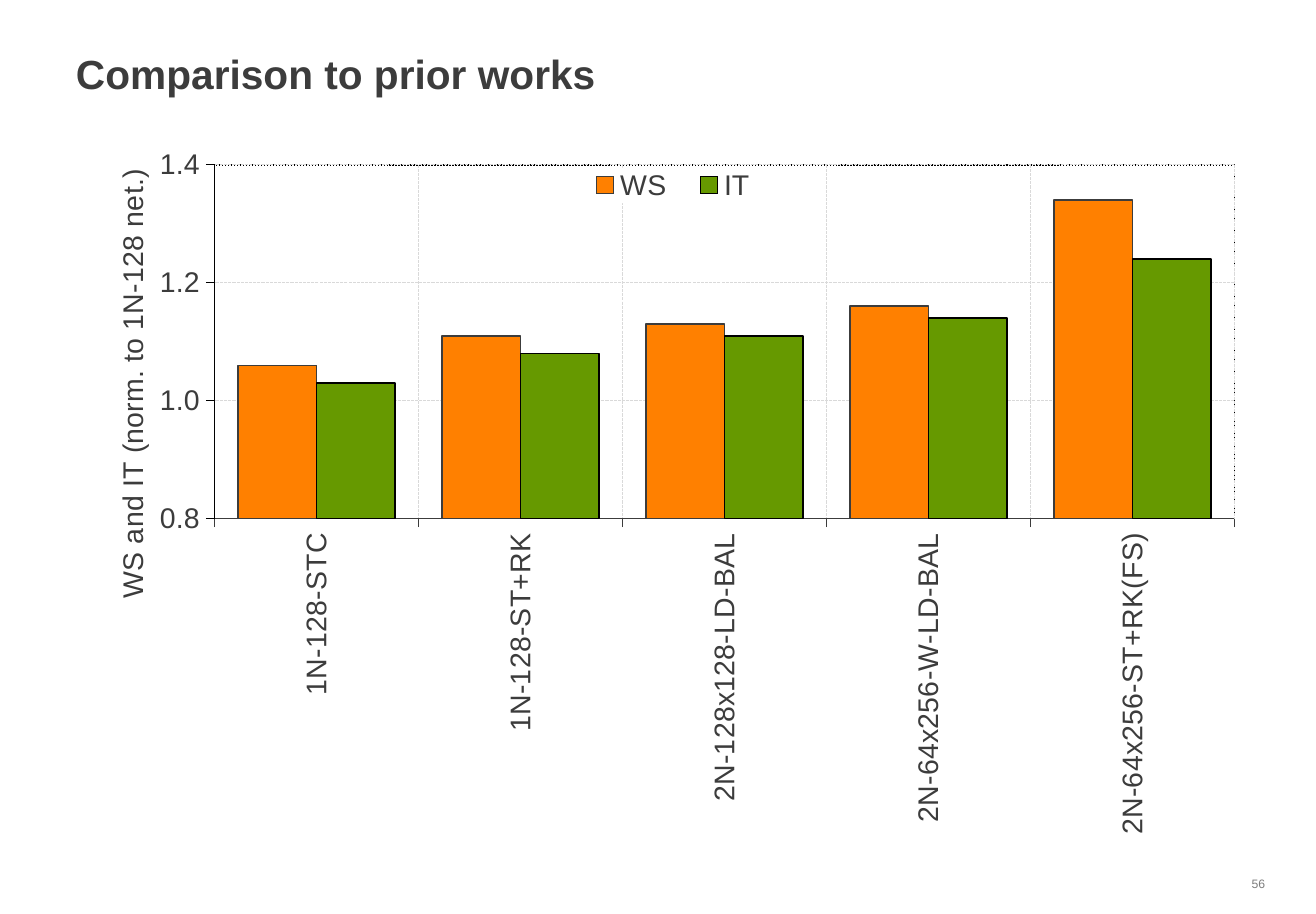
"""Build a slide with a column chart that compares prior works."""
from lxml import etree
from pptx import Presentation
from pptx.chart.data import CategoryChartData
from pptx.dml.color import RGBColor
from pptx.enum.chart import XL_CHART_TYPE, XL_LEGEND_POSITION, XL_TICK_MARK
from pptx.enum.dml import MSO_LINE
from pptx.oxml import parse_xml
from pptx.oxml.ns import nsdecls, qn
from pptx.util import Inches, Pt

COLUMNS = XL_CHART_TYPE.COLUMN_CLUSTERED
LEGEND_RIGHT = XL_LEGEND_POSITION.RIGHT
TICK_OUTSIDE, TICK_NONE = XL_TICK_MARK.OUTSIDE, XL_TICK_MARK.NONE
DASH = MSO_LINE.SQUARE_DOT

FONT = "Arial"
COLORS = {"text": "3C3C3C", "muted": "7D7D7D", "grid": "D9D9D9", "black": "000000",
          "white": "FFFFFF", "orange": "FF8000", "green": "669900"}
TEXTS = [
    ("Comparison to prior works", (0.45, 0.33, 8.1, 0.43), 20, "text", True, 0.9),
    ("56", (8.49, 5.96, 0.3, 0.17), 6, "muted", False, 0.95),
]
CHART_BOX = (0.5, 0.88, 8.13, 4.84)
AXIS_TITLE = "WS and IT (norm. to 1N-128 net.)"
CATEGORIES = ["1N-128-STC", "1N-128-ST+RK", "2N-128x128-LD-BAL",
              "2N-64x256-W-LD-BAL", "2N-64x256-ST+RK(FS)"]
SERIES = [
    ("WS", [1.06, 1.11, 1.13, 1.16, 1.34], "orange", "text"),
    ("IT", [1.03, 1.08, 1.11, 1.14, 1.24], "green", "black"),
]
PLOT_LAYOUT = {"layoutTarget": "inner", "xMode": "edge", "yMode": "edge",
               "x": 0.119, "y": 0.051, "w": 0.858, "h": 0.5}
LEGEND_LAYOUT = {"xMode": "edge", "yMode": "edge", "x": 0.42, "y": 0.055, "w": 0.17, "h": 0.05}
TITLE_LAYOUT = {"xMode": "edge", "yMode": "edge", "x": 0.03, "y": 0.05}


def rgb(name):
    return RGBColor.from_string(COLORS[name])


def style_font(font, size, color, bold=False):
    font.name, font.size, font.bold = FONT, Pt(size), bold
    font.color.rgb = rgb(color)


def style_line(line, color, width):
    line.color.rgb = rgb(color)
    line.width = Pt(width)


def set_layout(element, index, values):
    for old in element.findall(qn("c:layout")):
        element.remove(old)
    layout = parse_xml(f"<c:layout {nsdecls('c')}/>")
    manual = etree.SubElement(layout, qn("c:manualLayout"))
    for name, value in values.items():
        etree.SubElement(manual, qn(f"c:{name}")).set("val", str(value))
    element.insert(index, layout)


def shape_properties(content):
    return parse_xml(f"<c:spPr {nsdecls('c', 'a')}>{content}</c:spPr>")


def turn_upward(body):
    body.set("rot", "-5400000")
    body.set("vert", "horz")


def add_text(slide, text, box, size, color, bold, spacing):
    frame = slide.shapes.add_textbox(*map(Inches, box)).text_frame
    frame.word_wrap = True
    frame.margin_left = frame.margin_right = Inches(0.07)
    frame.margin_top = frame.margin_bottom = Inches(0.04)
    frame.text = text
    paragraph = frame.paragraphs[0]
    paragraph.line_spacing = spacing
    style_font(paragraph.runs[0].font, size, color, bold)


def style_axis(axis, line_color):
    axis.major_tick_mark, axis.minor_tick_mark = TICK_OUTSIDE, TICK_NONE
    style_line(axis.format.line, line_color, 0.75)
    axis.has_major_gridlines = True
    grid = axis.major_gridlines.format.line
    style_line(grid, "grid", 0.5)
    grid.dash_style = DASH
    style_font(axis.tick_labels.font, 14, "text")


def add_chart(slide):
    data = CategoryChartData()
    data.categories = CATEGORIES
    for name, values, _, _ in SERIES:
        data.add_series(name, values)
    chart = slide.shapes.add_chart(COLUMNS, *map(Inches, CHART_BOX), data).chart
    chart.has_title = False
    style_font(chart.font, 14, "text")

    plot = chart.plots[0]
    plot.gap_width, plot.overlap, plot.vary_by_categories = 60, 0, False
    for series, (_, _, fill, outline) in zip(plot.series, SERIES):
        series.format.fill.solid()
        series.format.fill.fore_color.rgb = rgb(fill)
        style_line(series.format.line, outline, 0.75)

    category_axis, value_axis = chart.category_axis, chart.value_axis
    style_axis(category_axis, "text")
    style_axis(value_axis, "black")
    turn_upward(category_axis._element.find(qn("c:txPr")).find(qn("a:bodyPr")))
    value_axis.minimum_scale, value_axis.maximum_scale, value_axis.major_unit = 0.8, 1.4, 0.2
    value_axis.tick_labels.number_format = "#,##0.0"
    value_axis.tick_labels.number_format_is_linked = False

    title = value_axis.axis_title
    title.text_frame.text = AXIS_TITLE
    style_font(title.text_frame.paragraphs[0].runs[0].font, 14, "text")
    turn_upward(title.text_frame._txBody.find(qn("a:bodyPr")))
    set_layout(title._element, 1, TITLE_LAYOUT)

    chart.has_legend = True
    legend = chart.legend
    legend.position, legend.include_in_layout = LEGEND_RIGHT, False
    set_layout(legend._element, 1, LEGEND_LAYOUT)
    white = f'<a:solidFill><a:srgbClr val="{COLORS["white"]}"/></a:solidFill>'
    legend._element.append(shape_properties(white))

    plot_area = chart._chartSpace.chart.plotArea
    set_layout(plot_area, 0, PLOT_LAYOUT)
    plot_area.append(shape_properties(
        f'<a:noFill/><a:ln w="9525"><a:solidFill><a:srgbClr val="{COLORS["black"]}"/>'
        '</a:solidFill><a:prstDash val="sysDot"/></a:ln>'))


def main():
    presentation = Presentation()
    presentation.slide_width, presentation.slide_height = Inches(9), Inches(6.25)
    slide = presentation.slides.add_slide(presentation.slide_layouts[6])
    for item in TEXTS:
        add_text(slide, *item)
    add_chart(slide)
    presentation.save("out.pptx")


if __name__ == "__main__":
    main()
